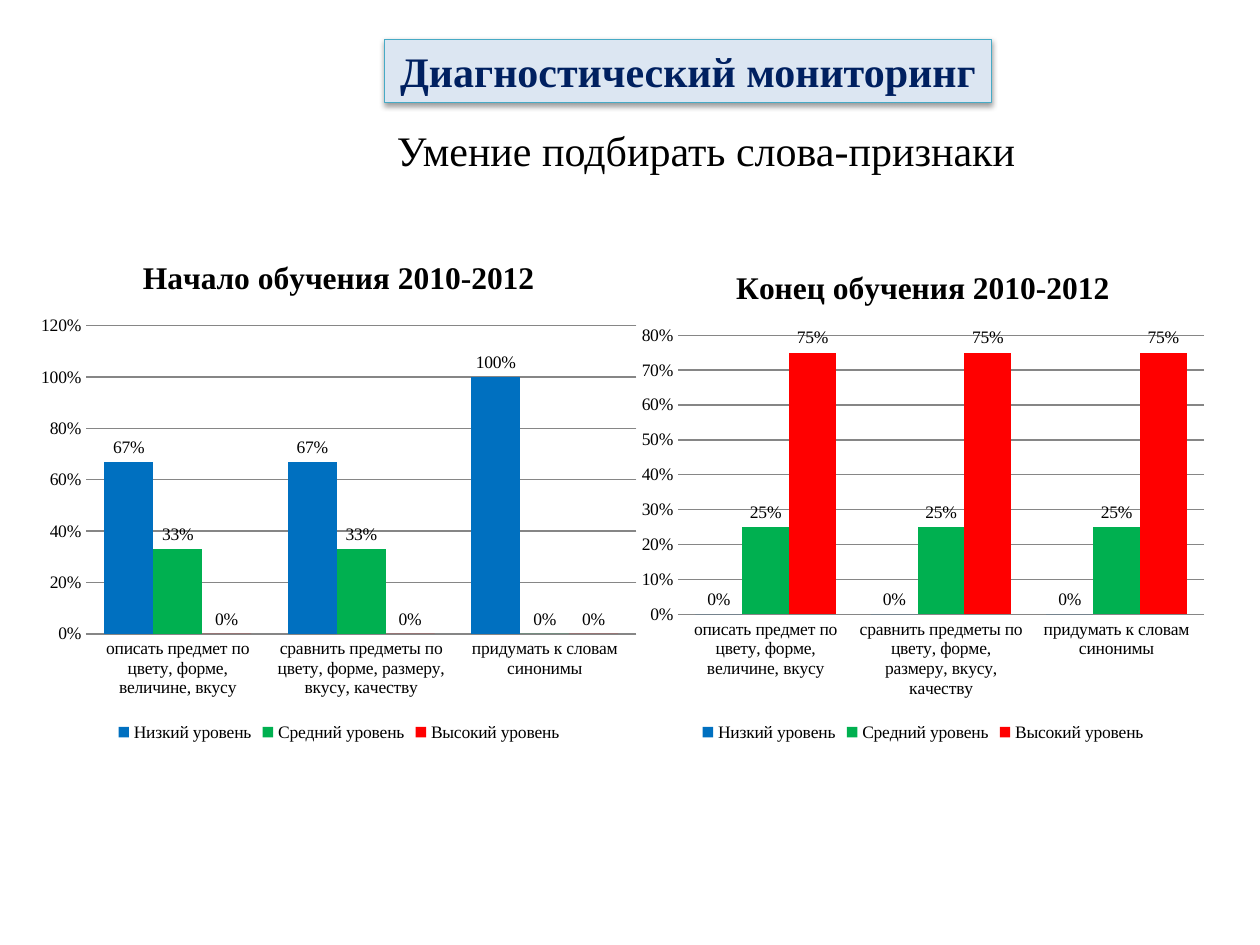
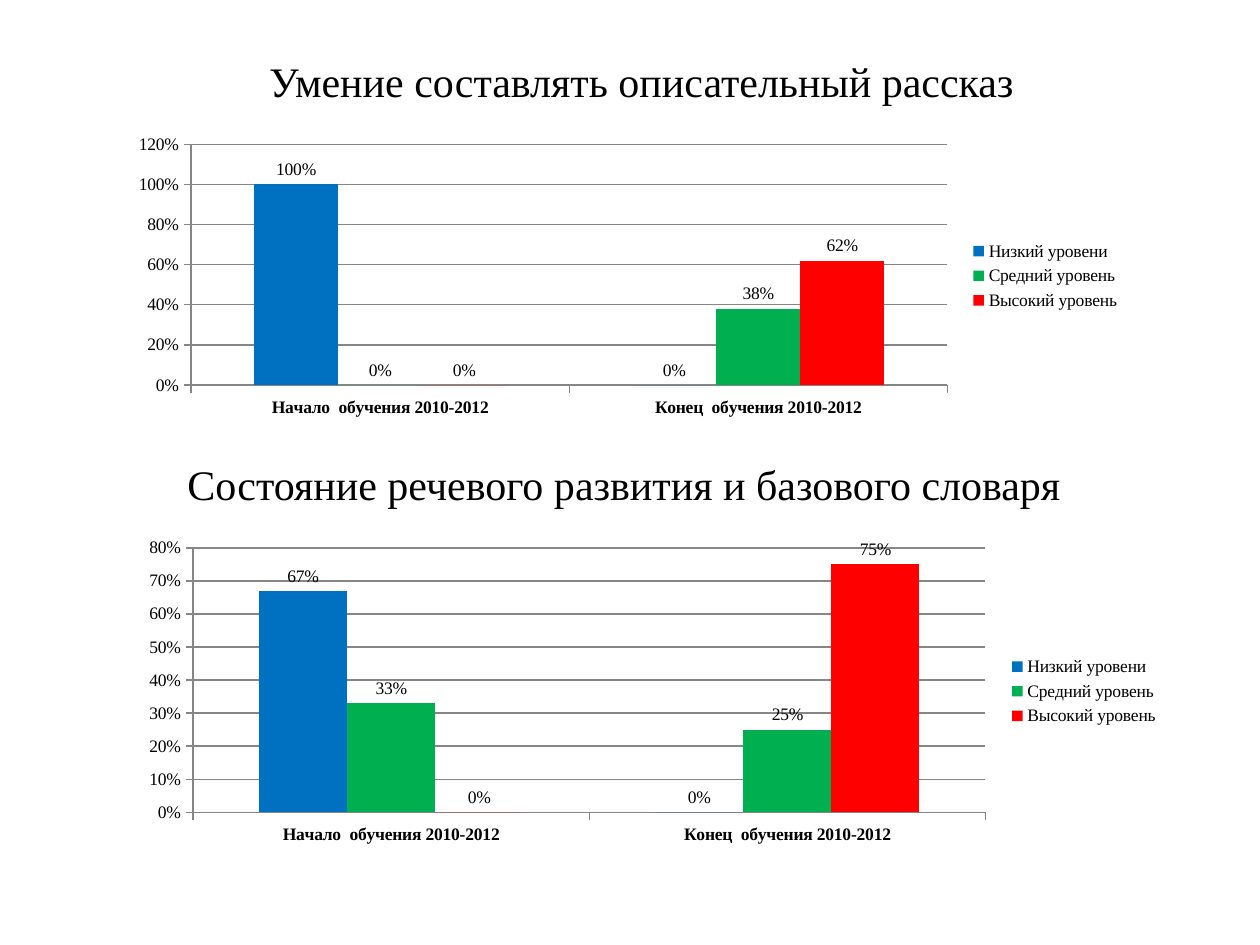
from lxml import etree
from pptx import Presentation
from pptx.chart.data import CategoryChartData
from pptx.dml.color import RGBColor
from pptx.enum.chart import XL_CHART_TYPE as CT, XL_LABEL_POSITION as LABEL
from pptx.enum.chart import XL_LEGEND_POSITION as LEGEND, XL_TICK_MARK as TICK
from pptx.enum.text import MSO_ANCHOR, PP_ALIGN
from pptx.oxml import parse_xml
from pptx.util import Cm, Pt

FONT = "Times New Roman"
BLACK = RGBColor(0x00, 0x00, 0x00)
NAVY = RGBColor(0x00, 0x20, 0x60)
PALE_BLUE = RGBColor(0xDC, 0xE6, 0xF2)
TEAL = RGBColor(0x46, 0xAA, 0xC5)
GRAY = RGBColor(0x86, 0x86, 0x86)
LEVEL_COLORS = (
    RGBColor(0x00, 0x70, 0xC0),
    RGBColor(0x00, 0xB0, 0x50),
    RGBColor(0xFF, 0x00, 0x00),
)
HIGHER_LEVELS = ("Средний уровень", "Высокий уровень")
SKILLS = (
    "описать предмет по цвету, форме, величине, вкусу",
    "сравнить предметы по цвету, форме, размеру, вкусу, качеству",
    "придумать к словам синонимы",
)
PERIODS = ("Начало  обучения 2010-2012", "Конец  обучения 2010-2012")
SHADOW = (
    '<a:effectLst xmlns:a="http://schemas.openxmlformats.org/drawingml/2006/main">'
    '<a:outerShdw blurRad="40000" dist="20000" dir="5400000" rotWithShape="0">'
    '<a:srgbClr val="000000"><a:alpha val="38000"/></a:srgbClr>'
    "</a:outerShdw></a:effectLst>"
)


def set_font(font, size=10, bold=False, color=BLACK):
    font.name, font.size, font.bold = FONT, Pt(size), bold
    font.color.rgb = color


def write(sp, text, align=PP_ALIGN.CENTER, wrap=True, **style):
    tf = sp.text_frame
    tf.word_wrap = wrap
    tf.vertical_anchor = MSO_ANCHOR.TOP
    p = tf.paragraphs[0]
    p.alignment = align
    r = p.add_run()
    r.text = text
    set_font(r.font, **style)


def place(sp, box):
    sp.left, sp.top, sp.width, sp.height = (Cm(v) for v in box)


def add_title(slide, box, text, **style):
    sp = slide.shapes.title
    place(sp, box)
    write(sp, text, size=24, **style)
    return sp


def add_heading(slide, box, text, **style):
    sp = slide.shapes.add_textbox(*(Cm(v) for v in box))
    write(sp, text, size=24, **style)


def add_level_chart(slide, box, cats, low_name, values, legend):
    data = CategoryChartData(number_format="0%")
    data.categories = cats
    for name, vals in zip((low_name, *HIGHER_LEVELS), values):
        data.add_series(name, vals)
    frame = slide.shapes.add_chart(CT.COLUMN_CLUSTERED, *(Cm(v) for v in box), data)
    chart = frame.chart
    set_font(chart.font)
    chart.has_title = False
    chart.has_legend = True
    chart.legend.position = legend
    chart.legend.include_in_layout = False
    set_font(chart.legend.font)

    plot = chart.plots[0]
    plot.vary_by_categories = False
    plot.gap_width, plot.overlap = 150, 0
    for series, color in zip(plot.series, LEVEL_COLORS):
        series.format.fill.solid()
        series.format.fill.fore_color.rgb = color
        series.invert_if_negative = False
        labels = series.data_labels
        labels.show_value = True
        labels.number_format, labels.number_format_is_linked = "0%", False
        labels.position = LABEL.OUTSIDE_END
        set_font(labels.font)

    for axis in (chart.category_axis, chart.value_axis):
        axis.major_tick_mark, axis.minor_tick_mark = TICK.OUTSIDE, TICK.NONE
        axis.format.line.color.rgb = GRAY
        set_font(axis.tick_labels.font)
    axis = chart.value_axis
    axis.tick_labels.number_format = "0%"
    axis.tick_labels.number_format_is_linked = False
    axis.major_gridlines.format.line.color.rgb = GRAY
    return chart


def add_skills_chart(slide, box, title, values):
    chart = add_level_chart(slide, box, SKILLS, "Низкий уровень", values, LEGEND.BOTTOM)
    chart.has_title = True
    write_title = chart.chart_title.text_frame.paragraphs[0].add_run()
    write_title.text = title
    set_font(write_title.font, size=18, bold=True)
    chart.chart_title.include_in_layout = False
    chart.plots[0].gap_width = 75
    for axis in (chart.category_axis, chart.value_axis):
        axis.major_tick_mark = TICK.NONE
    chart.value_axis.format.line.fill.background()


def add_periods_chart(slide, box, values):
    chart = add_level_chart(slide, box, PERIODS, "Низкий уровени", values, LEGEND.RIGHT)
    chart.category_axis.tick_labels.font.bold = True


def build_skills_slide(slide):
    sp = add_title(slide, (7.75, 0.79, 12.24, 1.28), "Диагностический мониторинг",
                   wrap=False, bold=True, color=NAVY)
    sp.fill.solid()
    sp.fill.fore_color.rgb = PALE_BLUE
    sp.line.color.rgb = TEAL
    sp.line.width = Pt(0.75)
    sp.element.spPr.append(parse_xml(SHADOW))
    add_heading(slide, (7.75, 2.39, 13.11, 1.28), "Умение подбирать слова-признаки",
                align=PP_ALIGN.LEFT, wrap=False)
    add_skills_chart(slide, (0.58, 4.75, 12.5, 10.31), "Начало обучения 2010-2012",
                     ((0.67, 0.67, 1), (0.33, 0.33, 0), (0, 0, 0)))
    add_skills_chart(slide, (12.7, 4.95, 11.81, 10.11), "Конец обучения 2010-2012",
                     ((0, 0, 0), (0.25,) * 3, (0.75,) * 3))


def build_periods_slide(slide):
    add_title(slide, (3.96, 0.99, 18.16, 1.28), "Умение составлять описательный рассказ ")
    add_periods_chart(slide, (2.39, 2.59, 20.45, 5.94), ((1, 0), (0, 0.38), (0, 0.62)))
    add_heading(slide, (1.57, 9.12, 22.02, 1.28),
                "Состояние речевого развития и базового словаря")
    add_periods_chart(slide, (2.59, 10.72, 21.03, 6.43),
                      ((0.67, 0), (0.33, 0.25), (0, 0.75)))


def main():
    prs = Presentation()
    prs.slide_width, prs.slide_height = Cm(25.4), Cm(19.05)
    title_only = prs.slide_layouts[5]
    for build in (build_skills_slide, build_periods_slide):
        build(prs.slides.add_slide(title_only))
    prs.save("out.pptx")


if __name__ == "__main__":
    main()
